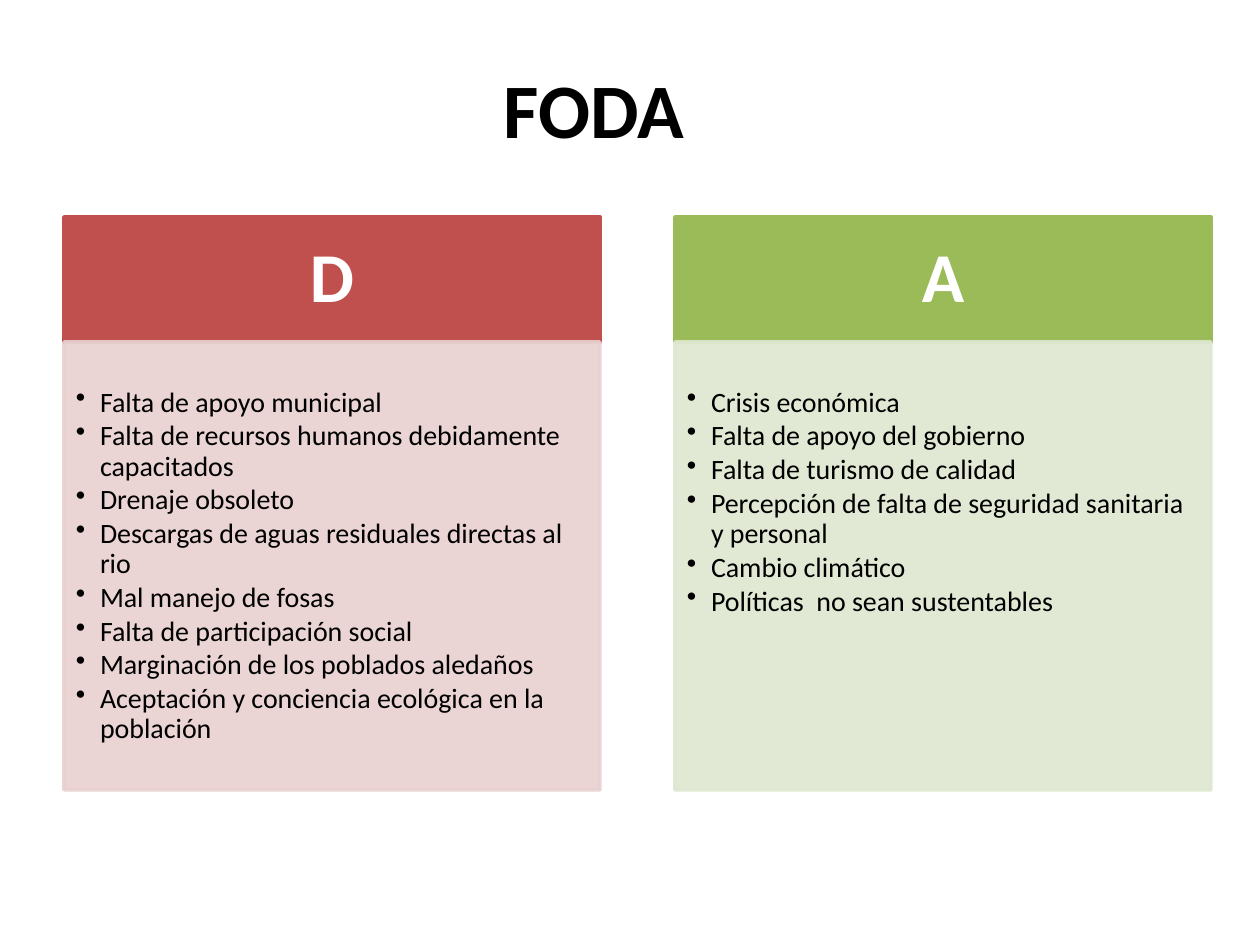
import pptx
import pptx.dml.color
import pptx.enum.shapes
import pptx.enum.text
import pptx.oxml.ns
import pptx.util
from lxml import etree

RGBColor = pptx.dml.color.RGBColor
ALIGN = pptx.enum.text.PP_ALIGN
ANCHOR = pptx.enum.text.MSO_ANCHOR
PX_PER_INCH = 126
BLACK = RGBColor(0x00, 0x00, 0x00)
WHITE = RGBColor(0xFF, 0xFF, 0xFF)
RED = RGBColor(0xC0, 0x50, 0x4D)
PALE_RED = RGBColor(0xE8, 0xD0, 0xD0)
GREEN = RGBColor(0x9B, 0xBB, 0x59)
PALE_GREEN = RGBColor(0xDE, 0xE7, 0xD1)

TITLE_FONT = {"name": "Calibri", "size": pptx.util.Pt(44), "bold": True}
HEADING_FONT = {"name": "Calibri", "size": pptx.util.Pt(40), "bold": True}
ITEM_FONT = {"name": "Calibri", "size": pptx.util.Pt(16), "bold": False}
HEADING_PARAGRAPH = {"alignment": ALIGN.CENTER, "line_spacing": 0.9}
ITEM_PARAGRAPH = {"alignment": ALIGN.LEFT, "line_spacing": 0.9,
                  "space_after": pptx.util.Pt(2)}

HEADING_HEIGHT = 125
ITEM_INDENT = 24
COLUMNS = [
    ("D", RED, PALE_RED, [
        "Falta de apoyo municipal",
        "Falta de recursos humanos debidamente capacitados",
        "Drenaje obsoleto",
        "Descargas de aguas residuales directas al rio",
        "Mal manejo de fosas",
        "Falta de participación social",
        "Marginación de los poblados aledaños",
        "Aceptación y conciencia ecológica en la población",
    ]),
    ("A", GREEN, PALE_GREEN, [
        "Crisis económica",
        "Falta de apoyo del gobierno",
        "Falta de turismo de calidad",
        "Percepción de falta de seguridad sanitaria y personal",
        "Cambio climático",
        "Políticas  no sean sustentables",
    ]),
]


def px(length):
    return round(length * pptx.util.Inches(1) / PX_PER_INCH)


def apply(target, values):
    for name, value in values.items():
        setattr(target, name, value)


def set_font(paragraph, values, color):
    apply(paragraph.font, values)
    paragraph.font.color.rgb = color


def set_frame(frame, anchor, left, top, right, bottom):
    apply(frame, {"word_wrap": True, "vertical_anchor": anchor,
                  "margin_left": px(left), "margin_top": px(top),
                  "margin_right": px(right), "margin_bottom": px(bottom)})


def add_bullet(paragraph):
    properties = paragraph._p.get_or_add_pPr()
    properties.set("marL", str(px(ITEM_INDENT)))
    properties.set("indent", str(-px(ITEM_INDENT)))
    bullet = etree.SubElement(properties, pptx.oxml.ns.qn("a:buChar"))
    bullet.set("char", "•")


def add_panel(slide, left, top, width, height, color, opacity=100):
    shape = slide.shapes.add_shape(
        pptx.enum.shapes.MSO_SHAPE.RECTANGLE,
        px(left), px(top), px(width), px(height))
    shape.shadow.inherit = False
    shape.line.width = pptx.util.Pt(2)
    for fill in (shape.fill, shape.line.fill):
        fill.solid()
        fill.fore_color.rgb = color
    if opacity < 100:
        for node in shape._element.spPr.iter(pptx.oxml.ns.qn("a:srgbClr")):
            alpha = etree.SubElement(node, pptx.oxml.ns.qn("a:alpha"))
            alpha.set("val", str(opacity * 1000))
    return shape


def add_title(slide, left, top, width, height):
    box = slide.shapes.add_textbox(px(left), px(top), px(width), px(height))
    box.text_frame.word_wrap = True
    paragraph = box.text_frame.paragraphs[0]
    paragraph.text = "FODA"
    set_font(paragraph, TITLE_FONT, BLACK)


def add_column(slide, left, top, width, height, heading, color, pale_color, items):
    header = add_panel(slide, left, top, width, HEADING_HEIGHT, color)
    set_frame(header.text_frame, ANCHOR.MIDDLE, 39, 23, 39, 23)
    paragraph = header.text_frame.paragraphs[0]
    paragraph.text = heading
    apply(paragraph, HEADING_PARAGRAPH)
    set_font(paragraph, HEADING_FONT, WHITE)

    body = add_panel(slide, left, top + HEADING_HEIGHT, width,
                     height - HEADING_HEIGHT, pale_color, 90)
    frame = body.text_frame
    set_frame(frame, ANCHOR.TOP, 12, 46, 15, 18)
    for index, item in enumerate(items):
        paragraph = frame.add_paragraph() if index else frame.paragraphs[0]
        paragraph.text = item
        apply(paragraph, ITEM_PARAGRAPH)
        add_bullet(paragraph)
        set_font(paragraph, ITEM_FONT, BLACK)


def main():
    presentation = pptx.Presentation()
    presentation.slide_width = pptx.util.Inches(10)
    presentation.slide_height = pptx.util.Inches(7.5)
    slide = presentation.slides.add_slide(presentation.slide_layouts[6])
    add_title(slide, 491, 55, 625, 106)
    for index, column in enumerate(COLUMNS):
        add_column(slide, 64 + index * 611, 217, 536, 573, *column)
    presentation.save("out.pptx")


if __name__ == "__main__":
    main()
